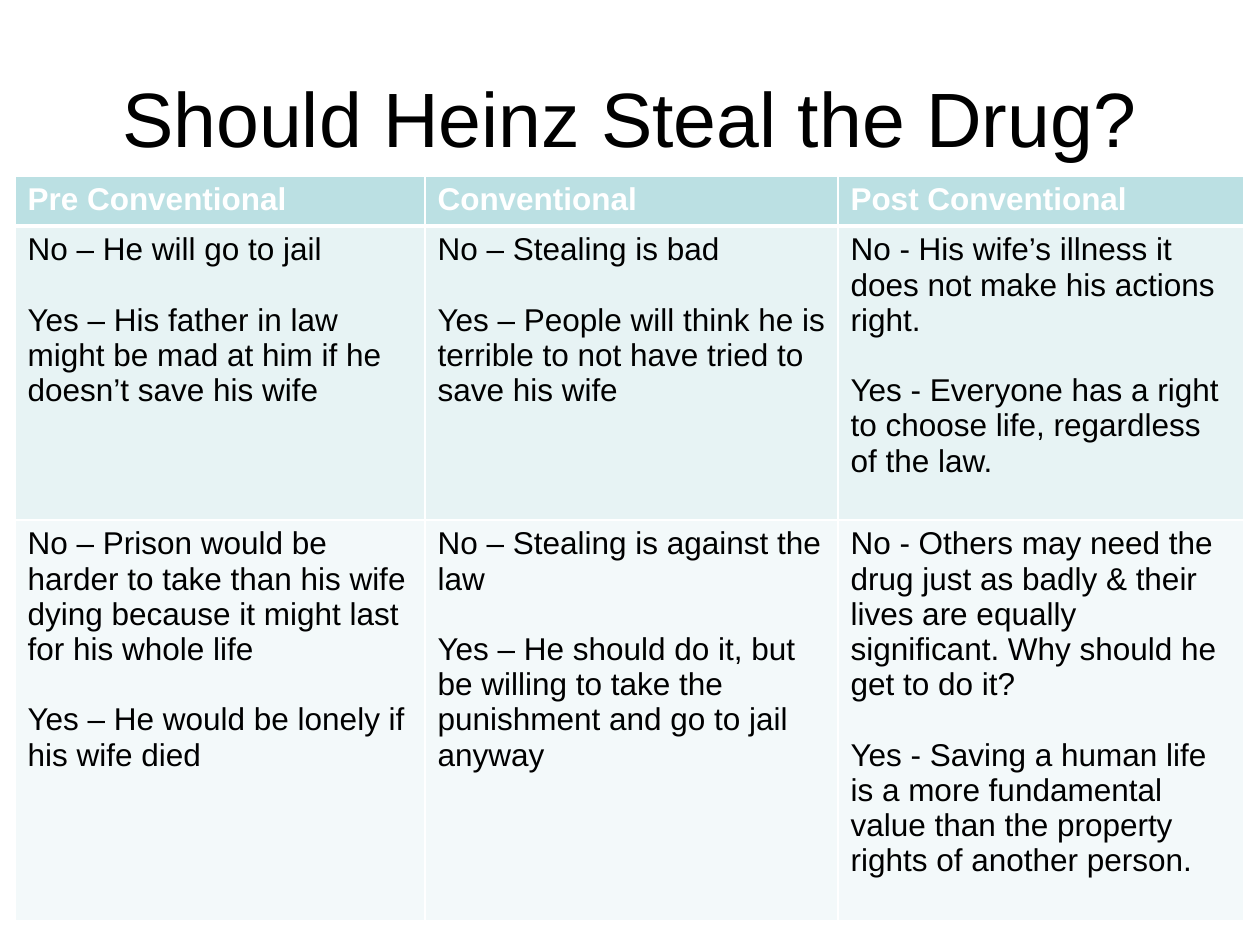
from dataclasses import dataclass

from lxml.etree import SubElement
from pptx import Presentation
from pptx.dml.color import RGBColor
from pptx.enum.text import MSO_ANCHOR as Anchor, MSO_AUTO_SIZE as AutoSize, PP_ALIGN as Align
from pptx.oxml.ns import qn
from pptx.util import Emu, Pt

PX = 914400 / 126
FONT = "Arial"
BLACK = RGBColor(0x00, 0x00, 0x00)
WHITE = RGBColor(0xFF, 0xFF, 0xFF)
HEADER_TEAL = RGBColor(0xBB, 0xE0, 0xE3)
BAND_TEAL = RGBColor(0xE7, 0xF3, 0xF4)
BAND_PALE = RGBColor(0xF3, 0xF9, 0xFA)


@dataclass(frozen=True)
class Row:
    height: int
    fill: RGBColor
    color: RGBColor
    bold: bool
    top_rule: int
    bottom_rule: int
    cells: tuple[tuple[str, ...], ...]


COLUMN_WIDTHS = (410, 413, 406)
ROWS = (
    Row(50, HEADER_TEAL, WHITE, True, 1, 3, (
        ("Pre Conventional",),
        ("Conventional",),
        ("Post Conventional",),
    )),
    Row(294, BAND_TEAL, BLACK, False, 3, 1, (
        ("No – He will go to jail",
         "Yes – His father in law might be mad at him if he doesn’t save his wife"),
        ("No – Stealing is bad",
         "Yes – People will think he is terrible to not have tried to save his wife"),
        ("No - His wife’s illness it does not make his actions right.",
         "Yes - Everyone has a right to choose life, regardless of the law."),
    )),
    Row(401, BAND_PALE, BLACK, False, 1, 1, (
        ("No – Prison would be harder to take than his wife dying because it might "
         "last for his whole life",
         "Yes – He would be lonely if his wife died"),
        ("No – Stealing is against the law",
         "Yes – He should do it, but be willing to take the punishment and go to jail anyway"),
        ("No - Others may need the drug just as badly & their lives are equally "
         "significant. Why should he get to do it?",
         "Yes - Saving a human life is a more fundamental value than the property "
         "rights of another person."),
    )),
)


def px(length: int) -> Emu:
    return Emu(round(length * PX))


def add_text(para, text: str, size: int, color: RGBColor, bold: bool = False) -> None:
    span = para.add_run()
    span.text = text
    span.font.name = FONT
    span.font.size = Pt(size)
    span.font.bold = bold
    span.font.color.rgb = color


def set_borders(cell, top: int, bottom: int) -> None:
    properties = cell._tc.get_or_add_tcPr()
    for side, width in (("L", 1), ("R", 1), ("T", top), ("B", bottom)):
        line = SubElement(properties, qn(f"a:ln{side}"), w=str(Pt(width)))
        fill = SubElement(line, qn("a:solidFill"))
        SubElement(fill, qn("a:srgbClr"), val=str(WHITE))


def fill_cell(cell, row: Row, texts: tuple[str, ...]) -> None:
    set_borders(cell, row.top_rule, row.bottom_rule)
    cell.fill.solid()
    cell.fill.fore_color.rgb = row.fill
    frame = cell.text_frame
    for index, text in enumerate(texts):
        para = frame.add_paragraph() if index else frame.paragraphs[0]
        para.space_before = Pt(20 if index else 0)
        add_text(para, text, 18, row.color, row.bold)


def add_title(page, text: str) -> None:
    box = page.shapes.title
    box.left, box.top, box.width, box.height = map(px, (63, 38, 1134, 157))
    frame = box.text_frame
    frame.auto_size = AutoSize.NONE
    frame.vertical_anchor = Anchor.MIDDLE
    para = frame.paragraphs[0]
    para.alignment = Align.CENTER
    add_text(para, text, 44, BLACK)


def add_answers(page) -> None:
    width, height = sum(COLUMN_WIDTHS), sum(row.height for row in ROWS)
    table = page.shapes.add_table(
        len(ROWS), len(COLUMN_WIDTHS), px(15), px(176), px(width), px(height)).table
    for column, column_width in zip(table.columns, COLUMN_WIDTHS):
        column.width = px(column_width)
    for table_row, row in zip(table.rows, ROWS):
        table_row.height = px(row.height)
        for cell, texts in zip(table_row.cells, row.cells):
            fill_cell(cell, row, texts)


def main() -> None:
    deck = Presentation()
    deck.slide_width, deck.slide_height = px(1260), px(945)
    page = deck.slides.add_slide(deck.slide_layouts[5])  # title only

    # Heading
    add_title(page, "Should Heinz Steal the Drug?")

    # Answers by stage of moral reasoning
    add_answers(page)

    deck.save("out.pptx")


if __name__ == "__main__":
    main()
